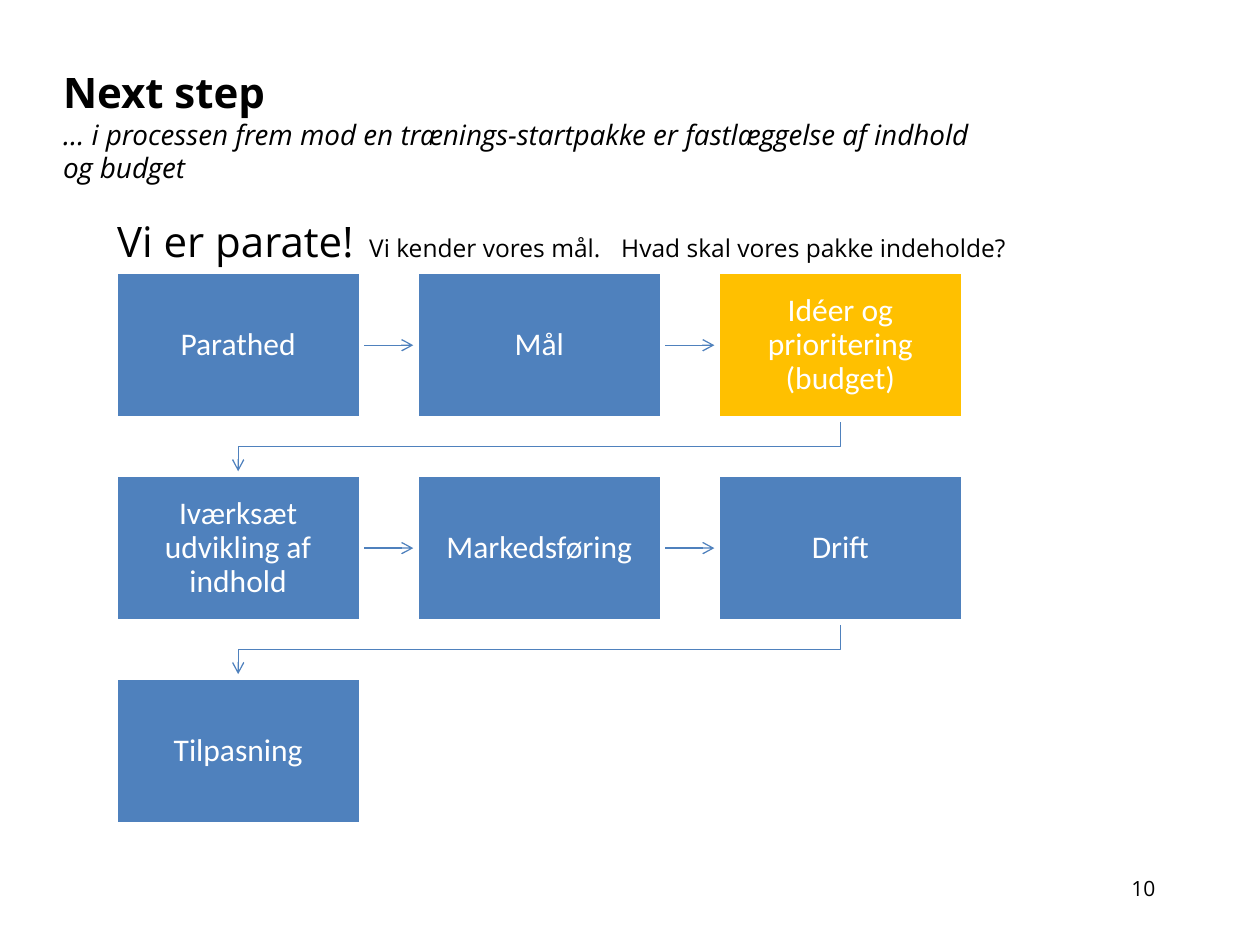
from lxml import etree
from pptx import Presentation
from pptx import util as u
from pptx.dml.color import RGBColor
from pptx.enum import shapes, text
from pptx.oxml.ns import qn

COLORS = {"ink": "000000", "step": "4F81BD", "current": "FFC000", "white": "FFFFFF"}
STEPS = [
    "Parathed", "Mål", "Idéer og prioritering\v(budget)",
    "Iværksæt udvikling af indhold", "Markedsføring", "Drift",
    "Tilpasning",
]
CURRENT_STEP = 2
COLUMNS = 3
STEP_WIDTH, STEP_HEIGHT = u.Inches(1.94), u.Inches(1.16)
PITCH_X, PITCH_Y = u.Inches(2.39), u.Inches(1.61)
CLEARANCE = u.Inches(0.03)


def color(name):
    return RGBColor.from_string(COLORS[name])


def style(span, size, font="Open Sans", ink="ink", bold=False, italic=False):
    span.font.size = u.Pt(size)
    span.font.name = font
    span.font.color.rgb = color(ink)
    span.font.bold = bold
    span.font.italic = italic


def prepare(box, area, inset=0, anchor=text.MSO_ANCHOR.TOP):
    box.left, box.top, box.width, box.height = area
    frame = box.text_frame
    frame.auto_size = text.MSO_AUTO_SIZE.NONE
    frame.word_wrap = True
    frame.vertical_anchor = anchor
    frame.margin_left = frame.margin_right = u.Inches(inset)
    frame.margin_top = frame.margin_bottom = u.Inches(inset)
    return frame


def add_heading(page, area):
    frame = prepare(page.shapes.title, area)
    frame.text = (
        "Next step\v… i processen frem mod en trænings-startpakke "
        "er fastlæggelse af indhold og budget"
    )
    para = frame.paragraphs[0]
    para.alignment = text.PP_ALIGN.LEFT
    heading, subtitle = para.runs
    style(heading, 24, bold=True)
    style(subtitle, 16, italic=True)


def add_captions(page, area):
    frame = prepare(page.placeholders[1], area)
    para = frame.paragraphs[0]
    properties = para._p.get_or_add_pPr()
    properties.set("marL", "0")
    properties.set("indent", "0")
    etree.SubElement(properties, qn("a:buNone"))
    tabs = etree.SubElement(properties, qn("a:tabLst"))
    for position in (2.43, 4.78):
        etree.SubElement(tabs, qn("a:tab"), pos=str(u.Inches(position)), algn="l")
    para.space_before = u.Pt(0)
    captions = [
        ("Vi er parate!", 24),
        ("\tVi kender vores mål.\tHvad skal vores pakke indeholde?", 14),
    ]
    for words, size in captions:
        span = para.add_run()
        span.text = words
        style(span, size)


def add_step(page, area, label, fill):
    box = page.shapes.add_shape(shapes.MSO_SHAPE.RECTANGLE, *area)
    box.shadow.inherit = False
    box.fill.solid()
    box.fill.fore_color.rgb = color(fill)
    box.line.color.rgb = color("white")
    box.line.width = u.Pt(2)
    frame = prepare(box, area, 0.14, text.MSO_ANCHOR.MIDDLE)
    frame.text = label
    para = frame.paragraphs[0]
    para.alignment = text.PP_ALIGN.CENTER
    para.line_spacing = 0.9
    for span in para.runs:
        style(span, 18, "Calibri", "white")


def style_arrow(arrow):
    arrow.line.color.rgb = color("step")
    arrow.line.width = u.Pt(0.75)
    etree.SubElement(arrow.line._get_or_add_ln(), qn("a:tailEnd"), type="arrow")


def add_next_arrow(page, left, top):
    start = left + STEP_WIDTH + CLEARANCE
    end = left + PITCH_X - CLEARANCE
    middle = top + STEP_HEIGHT // 2
    arrow = page.shapes.add_connector(
        shapes.MSO_CONNECTOR.STRAIGHT, start, middle, end, middle
    )
    etree.SubElement(arrow._element.spPr, qn("a:effectLst"))
    style_arrow(arrow)


def add_return_arrow(page, left, top, first_left):
    start = left + STEP_WIDTH // 2
    end = first_left + STEP_WIDTH // 2
    bottom = top + STEP_HEIGHT
    turn = (bottom + top + PITCH_Y) // 2
    builder = page.shapes.build_freeform(start, bottom + CLEARANCE)
    builder.add_line_segments(
        [(start, turn), (end, turn), (end, top + PITCH_Y - CLEARANCE)], close=False
    )
    arrow = builder.convert_to_shape()
    arrow.shadow.inherit = False
    arrow.fill.background()
    style_arrow(arrow)


def add_process(page, first_left, first_top):
    for index, label in enumerate(STEPS):
        row, column = divmod(index, COLUMNS)
        left = first_left + column * PITCH_X
        top = first_top + row * PITCH_Y
        fill = "current" if index == CURRENT_STEP else "step"
        add_step(page, (left, top, STEP_WIDTH, STEP_HEIGHT), label, fill)
        if index == len(STEPS) - 1:
            continue
        if column == COLUMNS - 1:
            add_return_arrow(page, left, top, first_left)
        else:
            add_next_arrow(page, left, top)


def add_page_number(page, area):
    box = page.shapes.add_textbox(*area)
    box.text_frame.word_wrap = True
    box.text_frame.text = "10"
    style(box.text_frame.paragraphs[0].runs[0], 12)


def main():
    deck = Presentation()
    deck.slide_width, deck.slide_height = u.Inches(10), u.Inches(7.5)
    page = deck.slides.add_slide(deck.slide_layouts[1])
    add_heading(page, [u.Inches(n) for n in (0.5, 0.53, 7.3, 1.02)])
    add_captions(page, [u.Inches(n) for n in (0.93, 1.71, 8.55, 4.5)])
    add_process(page, u.Inches(0.92), u.Inches(2.16))
    add_page_number(page, [u.Inches(n) for n in (8.88, 6.9, 0.62, 0.3)])
    deck.save("out.pptx")


if __name__ == "__main__":
    main()
